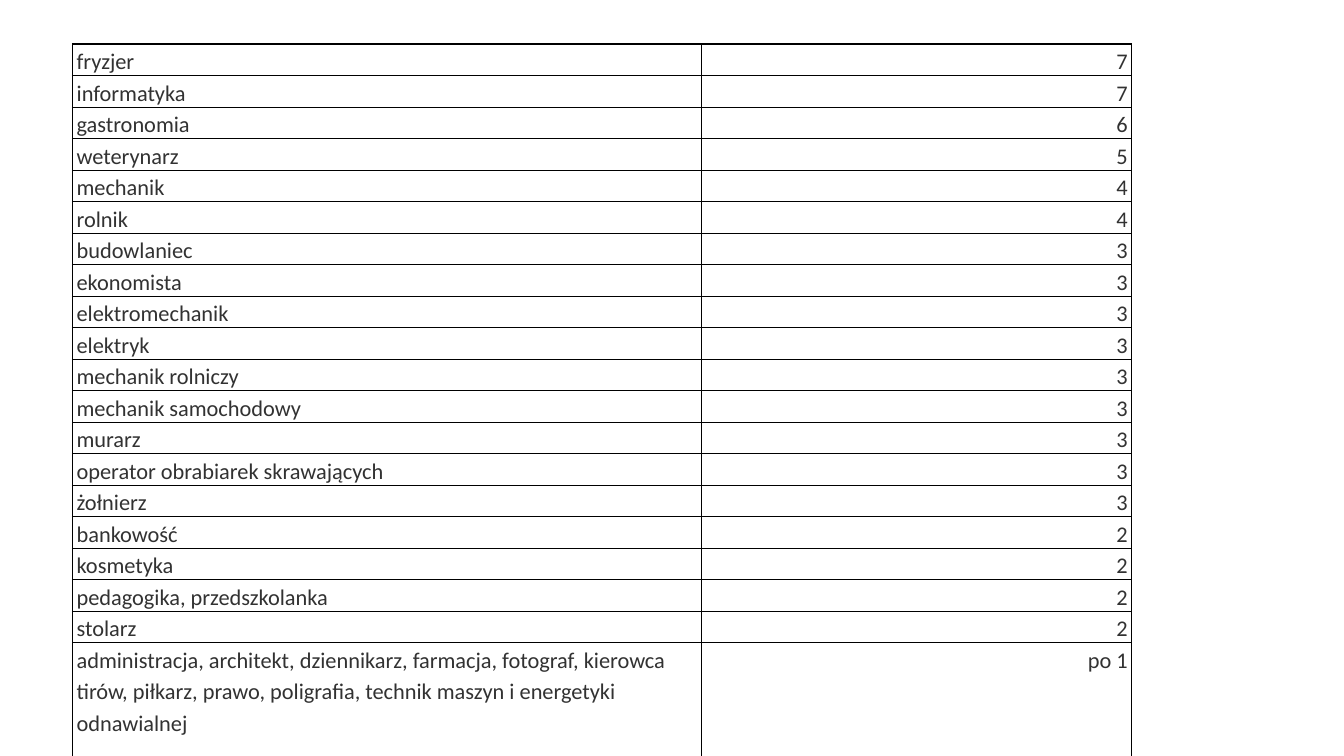
from lxml.etree import SubElement
from pptx import Presentation
from pptx.dml.color import RGBColor
from pptx.enum.text import PP_ALIGN as Align
from pptx.oxml.ns import qn
from pptx.util import Pt

EMU_PER_PX = 9525
INK = "323232"
RULE = "000000"
PAPER = "FFFFFF"
COLUMN_WIDTHS = (599, 410)
ROW_HEIGHT, LAST_ROW_HEIGHT = 30, 109

OCCUPATIONS = [
    ("fryzjer", "7"),
    ("informatyka", "7"),
    ("gastronomia", "6"),
    ("weterynarz", "5"),
    ("mechanik", "4"),
    ("rolnik", "4"),
    ("budowlaniec", "3"),
    ("ekonomista", "3"),
    ("elektromechanik", "3"),
    ("elektryk", "3"),
    ("mechanik rolniczy", "3"),
    ("mechanik samochodowy", "3"),
    ("murarz", "3"),
    ("operator obrabiarek skrawających", "3"),
    ("żołnierz", "3"),
    ("bankowość", "2"),
    ("kosmetyka", "2"),
    ("pedagogika, przedszkolanka", "2"),
    ("stolarz", "2"),
    ("administracja, architekt, dziennikarz, farmacja, fotograf, kierowca "
     "tirów, piłkarz, prawo, poligrafia, technik maszyn i energetyki "
     "odnawialnej", "po 1"),
]


def px(length):
    return length * EMU_PER_PX


def color(value):
    return RGBColor.from_string(value)


def write(frame, text, align=Align.LEFT, size=16, font="Calibri", ink=INK):
    para = frame.paragraphs[0]
    para.alignment = align
    para.line_spacing = 1.15
    span = para.add_run()
    span.text = text
    span.font.size = Pt(size)
    span.font.name = font
    span.font.color.rgb = color(ink)


def add_borders(cell, ink=RULE, width=1):
    properties = cell._tc.get_or_add_tcPr()
    for side in ("lnL", "lnR", "lnT", "lnB"):
        line = SubElement(properties, qn(f"a:{side}"), w=str(Pt(width)))
        fill = SubElement(line, qn("a:solidFill"))
        SubElement(fill, qn("a:srgbClr"), val=ink)


def add_occupation_table(page, left, top):
    heights = [ROW_HEIGHT] * (len(OCCUPATIONS) - 1) + [LAST_ROW_HEIGHT]
    table = page.shapes.add_table(
        len(OCCUPATIONS), len(COLUMN_WIDTHS), px(left), px(top),
        px(sum(COLUMN_WIDTHS)), px(sum(heights))).table
    table.first_row = table.horz_banding = False
    for column, width in zip(table.columns, COLUMN_WIDTHS):
        column.width = px(width)

    # Names on the left, counts on the right
    for row, height, texts in zip(table.rows, heights, OCCUPATIONS):
        row.height = px(height)
        for cell, text, align in zip(row.cells, texts, (Align.LEFT, Align.RIGHT)):
            cell.margin_left = cell.margin_right = px(4)
            cell.margin_top = cell.margin_bottom = 0
            add_borders(cell)
            cell.fill.background()
            write(cell.text_frame, text, align=align)


def main():
    deck = Presentation()
    deck.slide_width, deck.slide_height = px(1280), px(720)
    page = deck.slides.add_slide(deck.slide_layouts[6])

    # Background
    page.background.fill.solid()
    page.background.fill.fore_color.rgb = color(PAPER)

    # Table of chosen occupations
    add_occupation_table(page, left=69, top=42)
    deck.save("out.pptx")


if __name__ == "__main__":
    main()
